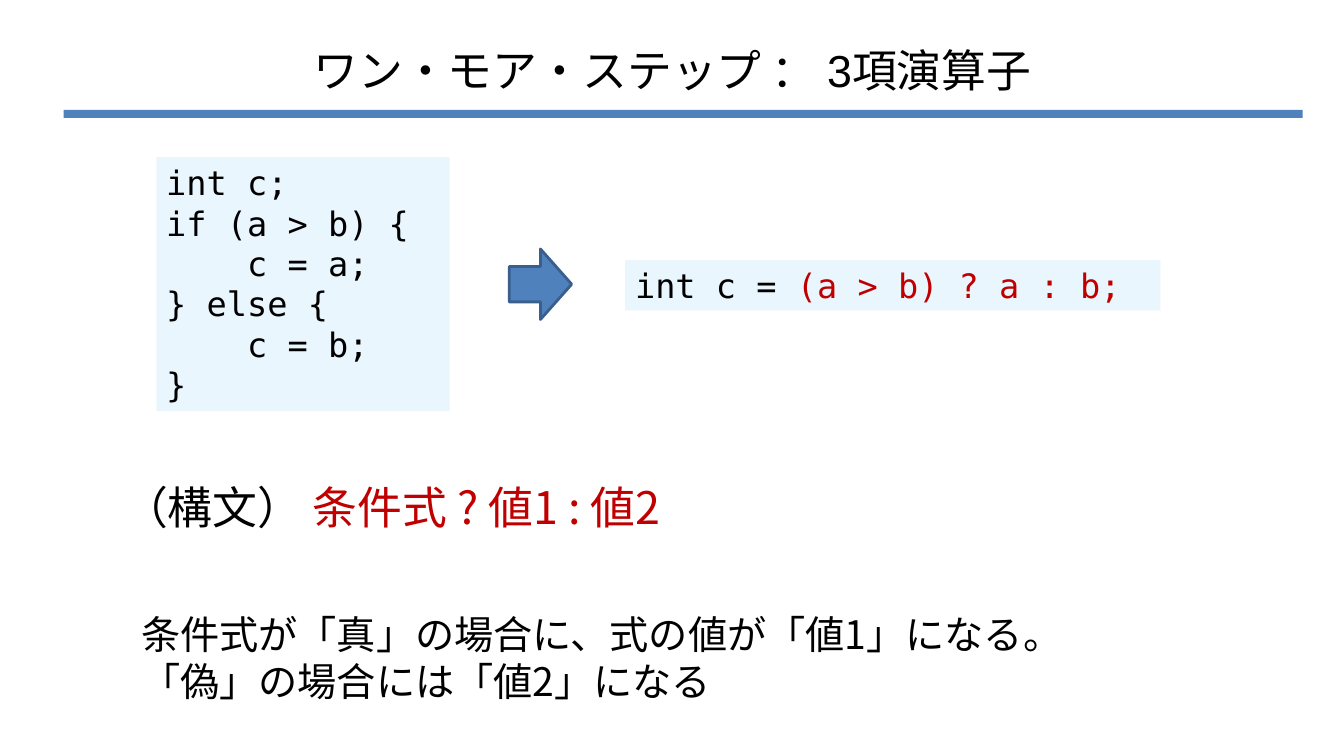
from pptx import Presentation
from pptx.dml.color import RGBColor
from pptx.enum.shapes import MSO_SHAPE as Shape
from pptx.enum.text import MSO_ANCHOR as Anchor, PP_ALIGN as Align
from pptx.oxml.ns import qn
from pptx.util import Inches, Pt
from lxml import etree

BLACK, RED, BLUE, DARK_BLUE, CODE_FILL = "000000", "C00000", "4F81BD", "3A5F8C", "EAF6FD"
SANS, CJK, MONO = "Arial", "Noto Sans CJK JP", "DejaVu Sans Mono"


def rgb(value):
    return RGBColor.from_string(value)


def place(shape, left, top, width, height):
    shape.left, shape.top = Inches(left), Inches(top)
    shape.width, shape.height = Inches(width), Inches(height)


def add_text(paragraph, text, size=24, font=MONO, color=BLACK):
    """Append a run; the CJK font is also set for East Asian glyphs."""
    run = paragraph.add_run()
    run.text = text
    run.font.size, run.font.name = Pt(size), font
    run.font.color.rgb = rgb(color)
    if font == CJK:
        east_asian = etree.SubElement(run.font._element, qn("a:ea"))
        east_asian.set("typeface", font)


def format_paragraph(paragraph, indent=0, before=0, spacing=None, align=Align.LEFT):
    properties = paragraph._p.get_or_add_pPr()
    properties.set("marL", str(Inches(indent)))
    properties.set("indent", "0")
    etree.SubElement(properties, qn("a:buNone"))
    paragraph.space_before = Pt(before)
    paragraph.line_spacing = spacing
    paragraph.alignment = align


def add_block(slide, kind, box, fill, line=None):
    shape = slide.shapes.add_shape(kind, *map(Inches, box))
    shape.shadow.inherit = False
    shape.fill.solid()
    shape.fill.fore_color.rgb = rgb(fill)
    if line:
        shape.line.color.rgb = rgb(line)
        shape.line.width = Pt(2)
    else:
        shape.line.fill.background()
    return shape


def add_code(slide, box, lines):
    """Each line is a list of (text, color) pairs."""
    frame = add_block(slide, Shape.RECTANGLE, box, CODE_FILL).text_frame
    frame.word_wrap = False
    frame.vertical_anchor = Anchor.TOP
    for index, line in enumerate(lines):
        paragraph = frame.add_paragraph() if index else frame.paragraphs[0]
        format_paragraph(paragraph, spacing=Pt(28.8))
        for text, color in line:
            add_text(paragraph, text, color=color)


def fill_title(title):
    place(title, 2.17, 0.3, 9, 0.79)
    title.text_frame.vertical_anchor = Anchor.MIDDLE
    paragraph = title.text_frame.paragraphs[0]
    format_paragraph(paragraph, align=Align.CENTER)
    add_text(paragraph, "ワン・モア・ステップ ： 3項演算子", 32, SANS)


def fill_body(body):
    place(body, 0.92, 4.71, 11.65, 2.34)
    frame = body.text_frame
    frame.vertical_anchor = Anchor.TOP
    syntax, meaning = frame.paragraphs[0], frame.add_paragraph()
    format_paragraph(syntax, indent=0.2)
    add_text(syntax, "（構文） ", 32, CJK)
    add_text(syntax, "条件式 ? 値1 : 値2", 32, CJK, RED)
    format_paragraph(meaning, indent=0.38, before=55)
    add_text(meaning, "条件式が「真」の場合に、式の値が「値1」になる。", 28, CJK)
    meaning.add_line_break()
    add_text(meaning, "「偽」の場合には「値2」になる", 28, CJK)


def main():
    presentation = Presentation()
    presentation.slide_width, presentation.slide_height = Inches(13.33), Inches(7.5)
    slide = presentation.slides.add_slide(presentation.slide_layouts[1])
    add_block(slide, Shape.RECTANGLE, (0.63, 1.09, 12.29, 0.08), BLUE)
    fill_title(slide.shapes.title)
    fill_body(slide.placeholders[1])
    branch = ["int c;", "if (a > b) {", "    c = a;", "} else {", "    c = b;", "}"]
    add_code(slide, (1.55, 1.56, 2.91, 2.52), [[(line, BLACK)] for line in branch])
    add_block(slide, Shape.RIGHT_ARROW, (5.05, 2.47, 0.62, 0.7), BLUE, DARK_BLUE)
    add_code(slide, (6.2, 2.58, 5.31, 0.5), [[("int c = ", BLACK), ("(a > b) ? a : b;", RED)]])
    presentation.save("out.pptx")


if __name__ == "__main__":
    main()
